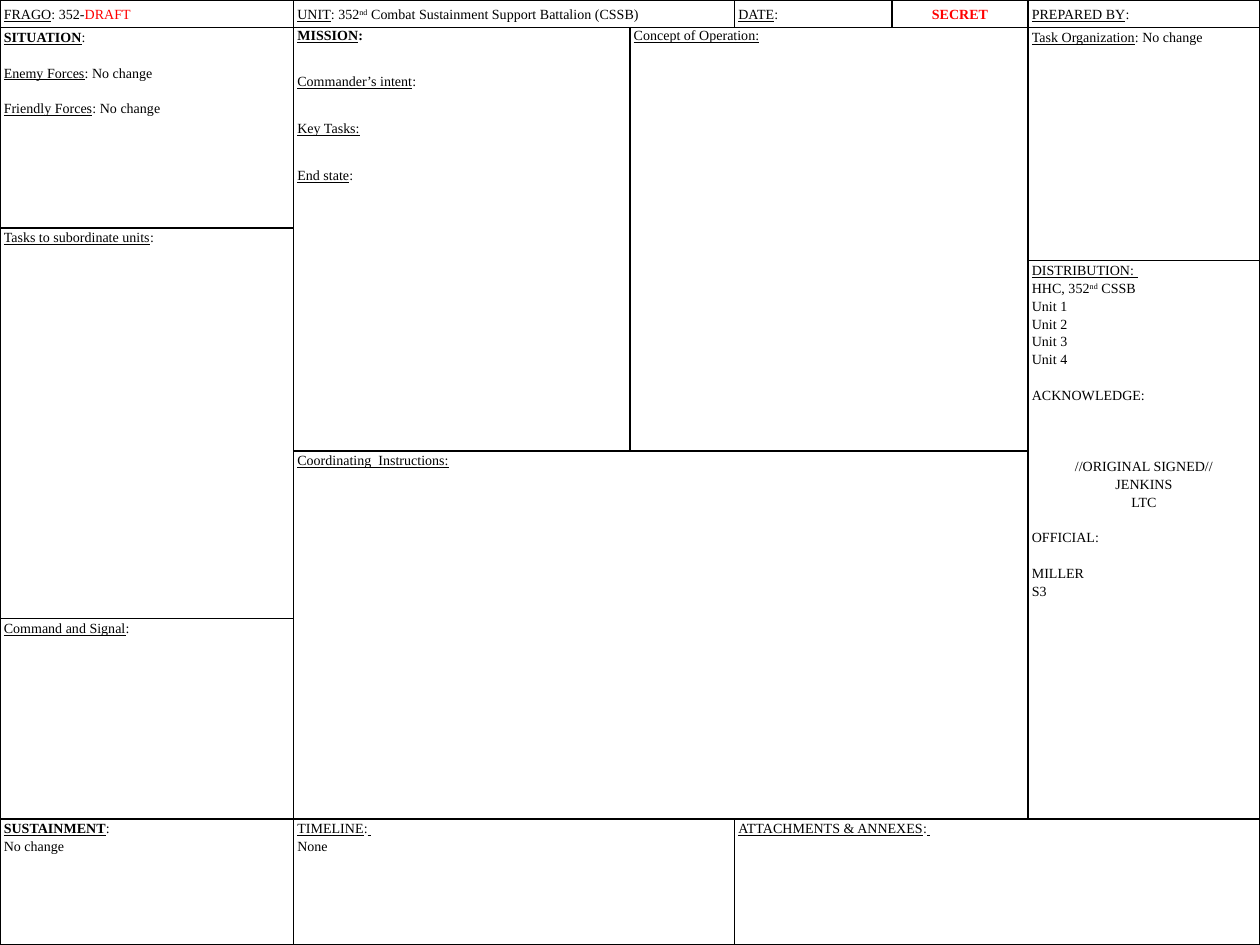
import pptx
import pptx.dml.color
import pptx.enum.text
import pptx.oxml
import pptx.oxml.ns
import pptx.util
from pptx.util import Inches, Pt

BLACK = pptx.dml.color.RGBColor(0, 0, 0)
RED = pptx.dml.color.RGBColor(0xFF, 0, 0)
WHITE = pptx.dml.color.RGBColor(0xFF, 0xFF, 0xFF)

FONT = "Times New Roman"
LINE = 1.15
GAP = 10.2  # points, one line at 1.15 spacing
WIDE_GAP = 17.8  # points, two single-spaced lines

# The last column and row take whatever is left of the box.
COLUMNS = [2.33, 2.67, 0.83, 1.25, 1.08]
ROWS = [0.22, 1.59, 0.26, 1.51, 1.33, 1.59]


def para(*runs, before=0, centred=False):
    """Describe a paragraph; a run is text or (text, flags).

    Flags: u underlined, b bold, r red, s superscript.
    """
    runs = [(run, "") if isinstance(run, str) else run for run in runs]
    return runs, before, centred


def heading(label, rest=":", flags="u", before=0):
    return para((label, flags), rest, before=before)


# (row, column, rows spanned, columns spanned, line spacing, paragraphs)
HEADER = [
    (0, 0, 1, 1, LINE, [para(("FRAGO", "u"), ": 352-", ("DRAFT", "r"))]),
    (0, 1, 1, 2, LINE, [para(("UNIT", "u"), ": 352", ("nd", "s"),
                             " Combat Sustainment Support Battalion (CSSB)")]),
    (0, 3, 1, 1, LINE, [heading("DATE")]),
    (0, 4, 1, 1, LINE, [para(("SECRET", "br"), centred=True)]),
    (0, 5, 1, 1, LINE, [heading("PREPARED BY")]),
]
BODY = [
    (1, 0, 1, 1, LINE, [
        heading("SITUATION", flags="bu"),
        heading("Enemy Forces", ": No change", before=GAP),
        heading("Friendly Forces", ": No change", before=GAP),
    ]),
    (1, 1, 3, 1, 1.0, [
        para(("MISSION", "bu"), (":", "b")),
        heading("Commander’s intent", before=WIDE_GAP),
        para(("Key Tasks:", "u"), before=WIDE_GAP),
        heading("End state", before=WIDE_GAP),
    ]),
    (1, 2, 3, 3, 1.0, [para(("Concept of Operation:", "u"))]),
    (1, 5, 2, 1, LINE, [heading("Task Organization", ": No change")]),
    (2, 0, 3, 1, LINE, [heading("Tasks to subordinate units")]),
    (3, 5, 4, 1, LINE, []),
    (4, 1, 2, 4, LINE, [para(("Coordinating  Instructions:", "u"))]),
    (5, 0, 1, 1, LINE, [heading("Command and Signal")]),
]
DISTRIBUTION = [
    para(("DISTRIBUTION: ", "u")),
    para("HHC, 352", ("nd", "s"), " CSSB"),
    *[para(f"Unit {number}") for number in range(1, 5)],
    para("ACKNOWLEDGE:", before=GAP),
    para("//ORIGINAL SIGNED//", before=3 * GAP, centred=True),
    para("JENKINS", centred=True),
    para("LTC", centred=True),
    para("OFFICIAL:", before=GAP),
    para("MILLER", before=GAP),
    para("S3"),
]
BODY[5] = (3, 5, 3, 1, LINE, DISTRIBUTION)
FOOTER = [
    (6, 0, 1, 1, LINE, [heading("SUSTAINMENT", flags="bu"), para("No change")]),
    (6, 1, 1, 2, LINE, [para(("TIMELINE", "u"), ":", (" ", "u")), para("None")]),
    (6, 3, 1, 3, LINE, [para(("ATTACHMENTS & ANNEXES", "u"), ":", (" ", "u"))]),
]


def style_font(font, flags):
    if "u" in flags:
        font.underline = True
    if "b" in flags:
        font.bold = True
    if "r" in flags:
        font.color.rgb = RED
    if "s" in flags:
        font._element.set("baseline", "30000")


def write_paragraph(paragraph, content, spacing):
    runs, before, centred = content
    paragraph.line_spacing = spacing
    if before:
        paragraph.space_before = Pt(before)
    if centred:
        paragraph.alignment = pptx.enum.text.PP_ALIGN.CENTER
    paragraph.font.name = FONT
    paragraph.font.size = Pt(8)
    paragraph.font.color.rgb = BLACK
    for text, flags in runs:
        run = paragraph.add_run()
        run.text = text
        style_font(paragraph.font if len(runs) == 1 else run.font, flags)


def format_cell(cell):
    """Give a cell thin margins, black borders and a white fill."""
    cell.margin_left = cell.margin_right = Inches(0.03)
    cell.margin_top = cell.margin_bottom = 0
    properties = cell._tc.get_or_add_tcPr()
    for side in ("lnL", "lnR", "lnT", "lnB"):
        properties.append(pptx.oxml.parse_xml(
            f'<a:{side} {pptx.oxml.ns.nsdecls("a")} w="{Pt(1)}"><a:solidFill>'
            f'<a:srgbClr val="{BLACK}"/></a:solidFill></a:{side}>'))
    cell.fill.solid()
    cell.fill.fore_color.rgb = WHITE


def fill_sections(table, sections, anchor):
    for row, column, height, width, spacing, contents in sections:
        cell = table.cell(row, column)
        if height * width > 1:
            cell.merge(table.cell(row + height - 1, column + width - 1))
        cell.vertical_anchor = anchor
        frame = cell.text_frame
        for index, content in enumerate(contents):
            paragraph = frame.add_paragraph() if index else frame.paragraphs[0]
            write_paragraph(paragraph, content, spacing)


def add_order_table(slide, left, top, width, height):
    table = slide.shapes.add_table(len(ROWS) + 1, len(COLUMNS) + 1,
                                   left, top, width, height).table
    table.first_row = table.horz_banding = False
    widths = [Inches(size) for size in COLUMNS]
    heights = [Inches(size) for size in ROWS]
    for column, size in zip(table.columns, widths + [width - sum(widths)]):
        column.width = size
    for row, size in zip(table.rows, heights + [height - sum(heights)]):
        row.height = size
    for cell in table.iter_cells():
        format_cell(cell)
        cell.text_frame.paragraphs[0].font.size = Pt(8)
    fill_sections(table, HEADER, pptx.enum.text.MSO_ANCHOR.MIDDLE)
    fill_sections(table, BODY + FOOTER, pptx.enum.text.MSO_ANCHOR.TOP)


def main():
    presentation = pptx.Presentation()
    presentation.slide_width = Inches(10)
    presentation.slide_height = Inches(7.5)
    slide = presentation.slides.add_slide(presentation.slide_layouts[6])
    add_order_table(slide, 0, 0, presentation.slide_width, presentation.slide_height)
    presentation.save("out.pptx")


if __name__ == "__main__":
    main()
